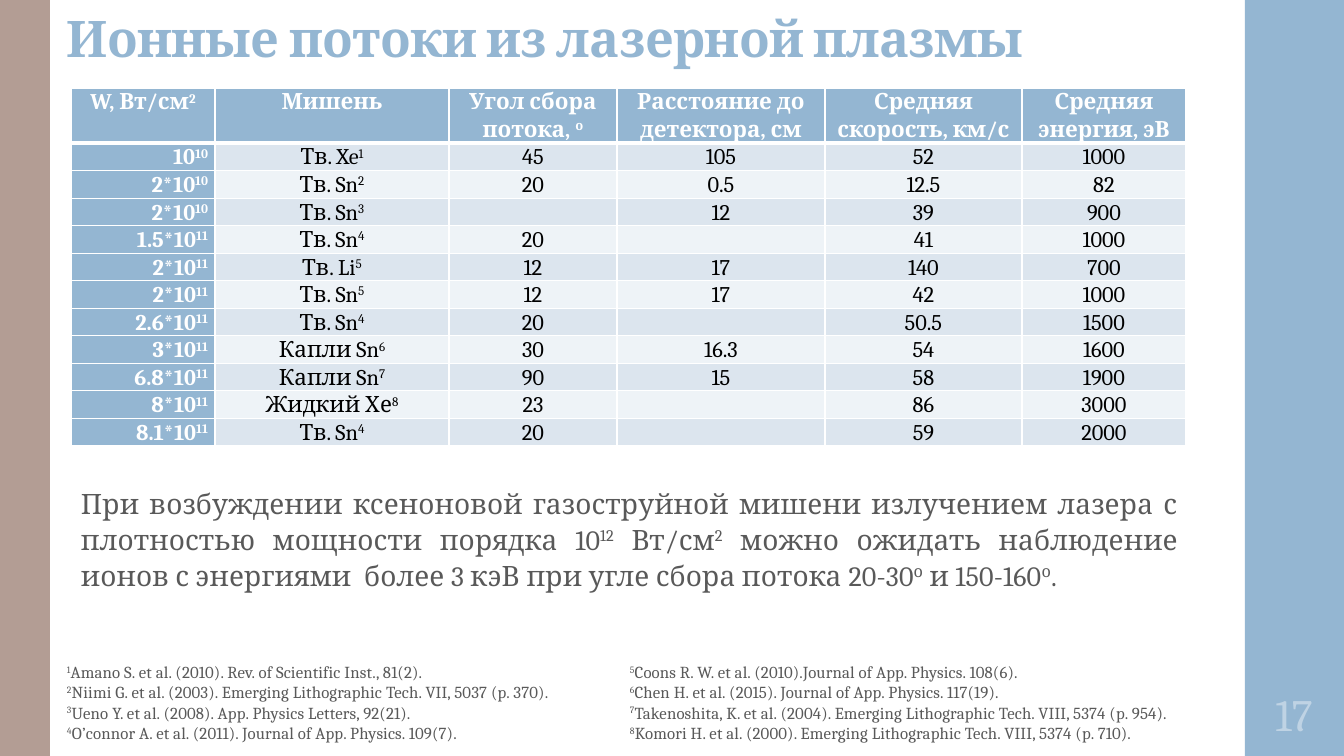
from lxml import etree
from pptx import Presentation
from pptx.dml.color import RGBColor
from pptx.enum.shapes import MSO_SHAPE
from pptx.enum.text import MSO_ANCHOR, MSO_AUTO_SIZE, PP_ALIGN
from pptx.oxml.ns import qn
from pptx.util import Pt

LEFT, MID, RIGHT, FULL = PP_ALIGN.LEFT, PP_ALIGN.CENTER, PP_ALIGN.RIGHT, PP_ALIGN.JUSTIFY
TOP, CENTER, BOTTOM = MSO_ANCHOR.TOP, MSO_ANCHOR.MIDDLE, MSO_ANCHOR.BOTTOM
RECT = MSO_SHAPE.RECTANGLE
NOFIT = MSO_AUTO_SIZE.NONE

SCALE = 914400 / 100.8
FONT = "Cambria"
HUES = {
    "blue": "94B6D2", "brown": "B39D94", "white": "FFFFFF", "black": "000000",
    "gray": "595959", "dark": "DCE5EE", "light": "EEF3F7", "pale": "BFD3E4",
}

COLS = [144, 234, 168, 208, 197, 164]
# Text between carets is raised.
HEAD = ["W, Вт/см^2^", "Мишень", "Угол сбора потока, ^о^",
        "Расстояние до детектора, см", "Средняя скорость, км/с",
        "Средняя энергия, эВ"]
ROWS = [
    ["10^10^", "Тв. Xe^1^", "45", "105", "52", "1000"],
    ["2*10^10^", "Тв. Sn^2^", "20", "0.5", "12.5", "82"],
    ["2*10^10^", "Тв. Sn^3^", "", "12", "39", "900"],
    ["1.5*10^11^", "Тв. Sn^4^", "20", "", "41", "1000"],
    ["2*10^11^", "Тв. Li^5^", "12", "17", "140", "700"],
    ["2*10^11^", "Тв. Sn^5^", "12", "17", "42", "1000"],
    ["2.6*10^11^", "Тв. Sn^4^", "20", "", "50.5", "1500"],
    ["3*10^11^", "Капли Sn^6^", "30", "16.3", "54", "1600"],
    ["6.8*10^11^", "Капли Sn^7^", "90", "15", "58", "1900"],
    ["8*10^11^", "Жидкий Хе^8^", "23", "", "86", "3000"],
    ["8.1*10^11^", "Тв. Sn^4^", "20", "", "59", "2000"],
]
CLAIM = ("При возбуждении ксеноновой газоструйной мишени излучением лазера с "
         "плотностью мощности порядка 10^12^ Вт/см^2^ можно ожидать наблюдение "
         "ионов с энергиями  более 3 кэВ при угле сбора потока 20-30^о^ "
         "и 150-160^о^.")
REFS = [
    ["^1^Amano S. et al. (2010). Rev. of Scientific Inst., 81(2).",
     "^2^Niimi G. et al. (2003). Emerging Lithographic Tech. VII, 5037 (p. 370).",
     "^3^Ueno Y. et al. (2008). App. Physics Letters, 92(21).",
     "^4^O’connor A. et al. (2011). Journal of App. Physics. 109(7)."],
    ["^5^Coons R. W. et al. (2010).Journal of App. Physics. 108(6).",
     "^6^Chen H. et al. (2015). Journal of App. Physics. 117(19).",
     "^7^Takenoshita, K. et al. (2004). Emerging Lithographic Tech. VIII, 5374 (p. 954).",
     "^8^Komori H. et al. (2000). Emerging Lithographic Tech. VIII, 5374 (p. 710)."],
]


def px(n):
    return round(n * SCALE)


def color(name):
    return RGBColor.from_string(HUES[name])


def write(frame, lines, size=16, hue="gray", bold=False, align=LEFT,
          lead=1.0, after=0, track=0):
    """Fill a text frame, one paragraph a line; track is in 1/100 pt."""
    frame.word_wrap = True
    for i, line in enumerate(lines):
        para = frame.add_paragraph() if i else frame.paragraphs[0]
        para.alignment, para.line_spacing = align, lead
        para.space_before, para.space_after = Pt(0), Pt(after)
        for j, part in enumerate(line.split("^")):
            if not part:
                continue
            run = para.add_run()
            run.text = part
            font = run.font
            font.name, font.size, font.bold = FONT, Pt(size), bold
            font.color.rgb = color(hue)
            props = run._r.get_or_add_rPr()
            props.set("spc", str(track))
            if j % 2:
                props.set("baseline", "30000")
        if not line:
            para._p.get_or_add_endParaRPr().set("sz", str(size * 100))


def add_text(slide, box, lines, **style):
    frame = slide.shapes.add_textbox(*map(px, box)).text_frame
    write(frame, lines, **style)


def add_bar(slide, box, hue):
    bar = slide.shapes.add_shape(RECT, *map(px, box))
    bar.shadow.inherit = False
    bar.fill.solid()
    bar.fill.fore_color.rgb = color(hue)
    bar.line.fill.background()


def add_title(slide, box, words):
    title = slide.shapes.title
    title.left, title.top, title.width, title.height = map(px, box)
    frame = title.text_frame
    frame.auto_size = NOFIT
    frame.vertical_anchor = BOTTOM
    frame.margin_left = frame.margin_right = px(10)
    frame.margin_top, frame.margin_bottom = px(3), px(5)
    write(frame, [words], size=36, hue="blue", bold=True, lead=0.7, track=-50)


def rule_cell(cell, base):
    """Draw white cell borders, the bottom one base points wide."""
    props = cell._tc.get_or_add_tcPr()
    for i, (side, width) in enumerate(zip("LRTB", (1, 1, 1, base))):
        line = etree.Element(qn(f"a:ln{side}"), w=str(Pt(width)))
        fill = etree.SubElement(line, qn("a:solidFill"))
        etree.SubElement(fill, qn("a:srgbClr"), val=HUES["white"])
        props.insert(i, line)


def add_grid(slide, left, top, head, step):
    data = [HEAD] + ROWS
    tall = head + step * len(ROWS)
    box = map(px, (left, top, sum(COLS), tall))
    table = slide.shapes.add_table(len(data), len(COLS), *box).table
    for col, wide in zip(table.columns, COLS):
        col.width = px(wide)
    for r, row in enumerate(data):
        table.rows[r].height = px(step if r else head)
        for c, words in enumerate(row):
            cell = table.cell(r, c)
            key = r == 0 or c == 0
            cell.margin_left = cell.margin_right = px(7)
            cell.margin_top = cell.margin_bottom = 0
            cell.vertical_anchor = TOP if r < 2 else CENTER if c else BOTTOM
            cell.fill.solid()
            cell.fill.fore_color.rgb = color(
                "blue" if key else "dark" if r % 2 else "light")
            rule_cell(cell, 1 if r else 3)
            write(cell.text_frame, [words], hue="white" if key else "black",
                  bold=key, align=RIGHT if r and not c else MID, lead=1.07)


def add_refs(slide, top, tall):
    for left, wide, lines in zip((57, 620), (563, 621), REFS):
        add_text(slide, (left, top, wide, tall), lines, size=12, track=10)


def main():
    deck = Presentation()
    deck.slide_width, deck.slide_height = px(1344), px(756)
    slide = deck.slides.add_slide(deck.slide_layouts[5])
    add_bar(slide, (1245, 0, 99, 756), "blue")
    add_bar(slide, (0, 0, 50, 756), "brown")
    add_title(slide, (57, 7, 1194, 64), "Ионные потоки из лазерной плазмы")
    add_grid(slide, 71, 88, 55, 27.5)
    add_text(slide, (71, 479, 1117, 119), [CLAIM], size=20, align=FULL,
             lead=1.07, after=8, track=10)
    add_refs(slide, 657, 92)
    add_text(slide, (1250, 682, 88, 66), ["17"], size=32, hue="pale", align=MID)
    deck.save("out.pptx")


if __name__ == "__main__":
    main()
